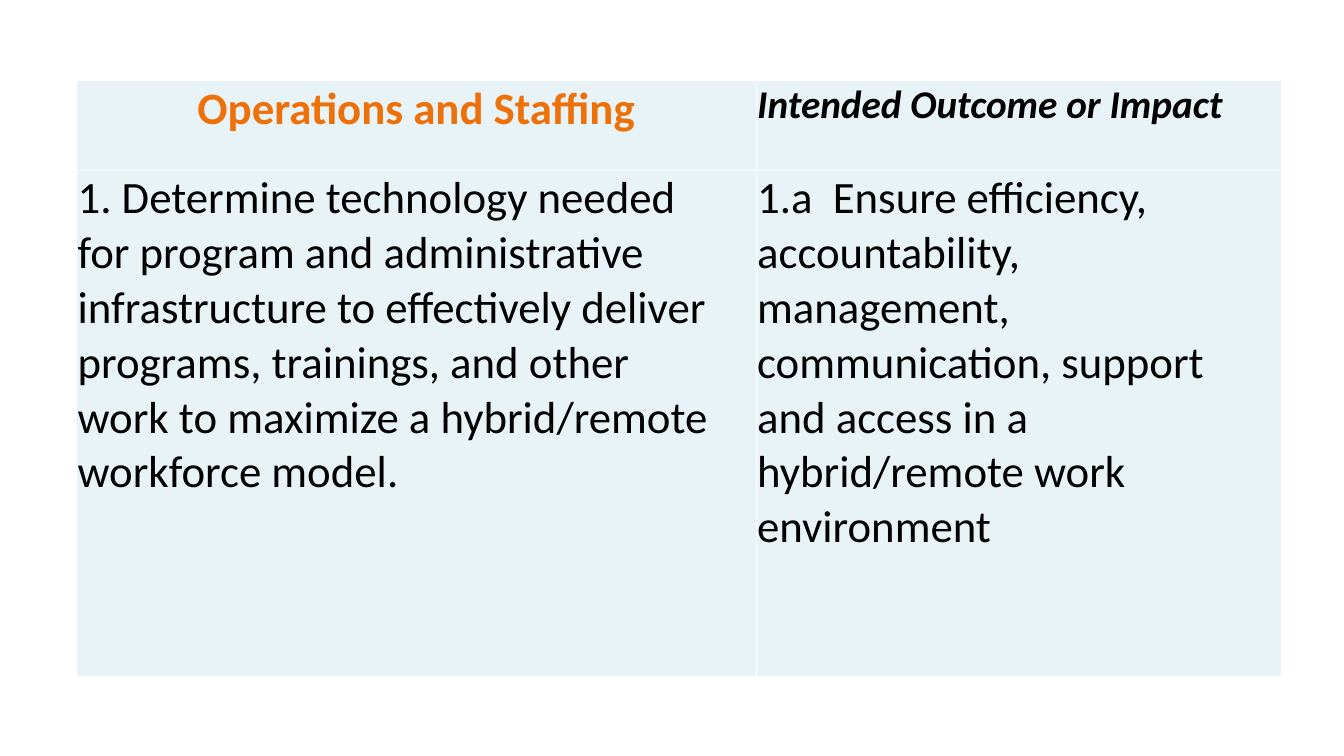
"""Build a slide with a table of operations goals and their intended outcomes."""
import pptx
import pptx.dml.color
import pptx.enum.text
import pptx.oxml
import pptx.oxml.ns
import pptx.util

Inches = pptx.util.Inches
Pt = pptx.util.Pt


def color(code):
    return pptx.dml.color.RGBColor.from_string(code)


def border(cell, code, width):
    props = cell._tc.get_or_add_tcPr()
    space = pptx.oxml.ns.nsdecls("a")
    for spot, side in enumerate(("lnL", "lnR", "lnT", "lnB")):
        line = pptx.oxml.parse_xml(
            f'<a:{side} {space} w="{Pt(width)}"><a:solidFill>'
            f'<a:srgbClr val="{code}"/></a:solidFill></a:{side}>')
        props.insert(spot, line)


deck = pptx.Presentation()
deck.slide_width = Inches(13.33)
deck.slide_height = Inches(7.5)
slide = deck.slides.add_slide(deck.slide_layouts[6])

widths = (6.74, 5.21)
heights = (0.89, 5.02)
left = pptx.enum.text.PP_ALIGN.LEFT
center = pptx.enum.text.PP_ALIGN.CENTER

goal = ("1. Determine technology needed for program and administrative "
        "infrastructure to effectively deliver programs, trainings, and other "
        "work to maximize a hybrid/remote workforce model.")
impact = ("1.a  Ensure efficiency, accountability, management, communication, "
          "support and access in a hybrid/remote work environment")

# text, size, color, bold, italic, alignment, right margin
cells = (
    (("Operations and Staffing", 32, "EE7008", True, False, center, 0.01),
     ("Intended Outcome or Impact", 28, "000000", True, True, left, 0.01)),
    ((goal, 32, "000000", False, False, left, 0.4),
     (impact, 32, "000000", False, False, left, 0.01)),
)

table = slide.shapes.add_table(
    len(heights), len(widths), Inches(0.76), Inches(0.8),
    Inches(sum(widths)), Inches(sum(heights))).table
for column, width in zip(table.columns, widths):
    column.width = Inches(width)

for row, height, items in zip(table.rows, heights, cells):
    row.height = Inches(height)
    for cell, item in zip(row.cells, items):
        text, size, ink, bold, italic, align, right = item
        cell.margin_left = cell.margin_top = Inches(0.01)
        cell.margin_right = Inches(right)
        cell.margin_bottom = 0
        cell.fill.solid()
        cell.fill.fore_color.rgb = color("E8F3F7")
        border(cell, "FFFFFF", 1)
        cell.text_frame.text = text
        para = cell.text_frame.paragraphs[0]
        para.alignment = align
        font = para.runs[0].font
        font.name = "Calibri"
        font.size = Pt(size)
        font.bold = bold
        font.italic = italic
        font.color.rgb = color(ink)

deck.save("out.pptx")
